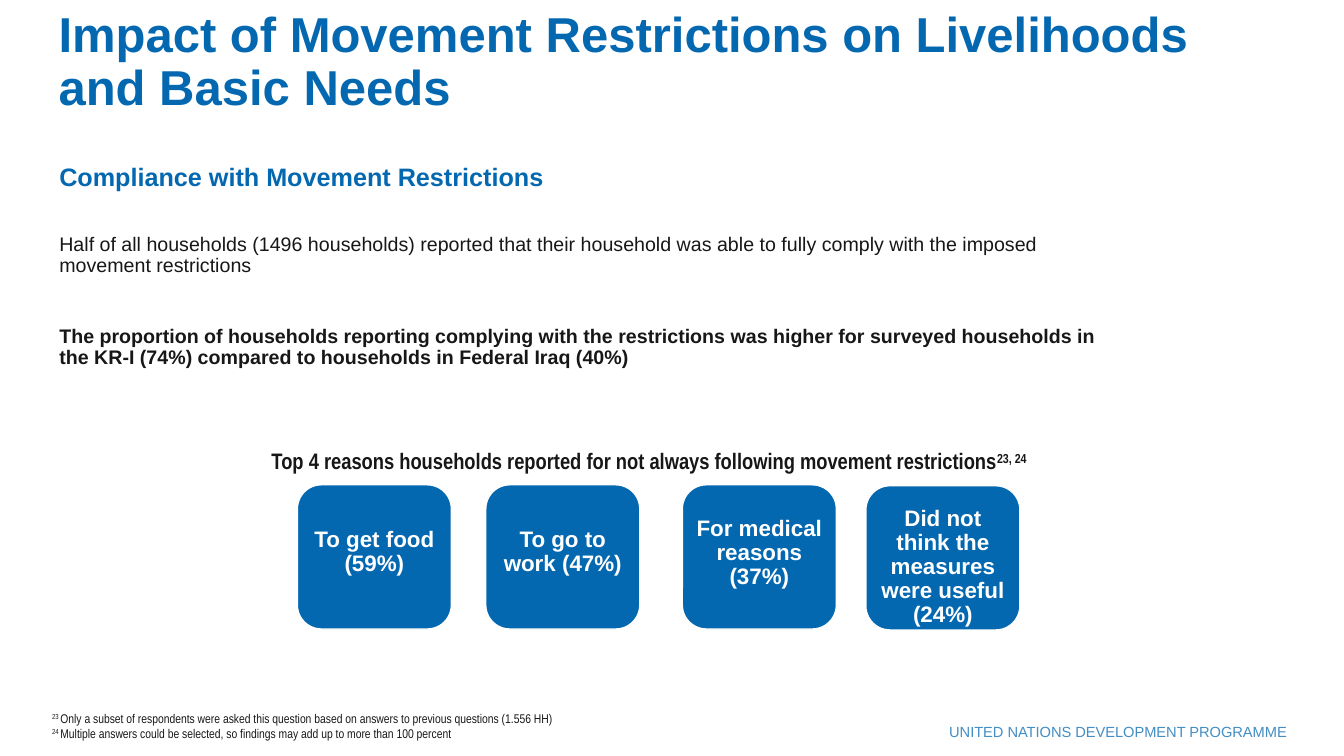
from pptx import Presentation
from pptx.dml.color import RGBColor
from pptx.enum.shapes import MSO_SHAPE as Shape
from pptx.enum.text import MSO_ANCHOR as Anchor, MSO_AUTO_SIZE as AutoSize, PP_ALIGN as Align
from pptx.util import Pt

COLORS = {"blue": "0468B1", "pale_blue": "438EC4", "ink": "181717", "white": "FFFFFF"}
REASONS = [
    ("To get food (59%)", 212.4, 346.3, 26),
    ("To go to work (47%)", 347, 346.3, 26),
    ("For medical reasons (37%)", 487.4, 346.3, 18),
    ("Did not think the measures were useful (24%)", 618.5, 347, 10),
]
NOTES = [
    ("23 ", "Only a subset of respondents were asked this question based on answers "
            "to previous questions (1.556 HH)"),
    ("24 ", "Multiple answers could be selected, so findings may add up to more than 100 percent"),
]


def color(name):
    """Return the named colour."""
    return RGBColor.from_string(COLORS[name])


def write(para, text, size=14, font="Arial", ink="ink", bold=False, raised=False):
    """Add a formatted span of text to a paragraph."""
    span = para.add_run()
    span.text = text
    span.font.size = Pt(size)
    span.font.name = font
    span.font.bold = bold
    span.font.color.rgb = color(ink)
    if raised:
        span.font._element.set("baseline", "30000")


def set_para(para, align=Align.LEFT, spacing=None, before=0):
    """Set alignment and spacing of a paragraph and return it."""
    para.alignment = align
    para.line_spacing = spacing
    para.space_before = Pt(before)
    return para


def add_box(page, left, top, width, height):
    """Add a wrapping text box and return its text frame."""
    box = page.shapes.add_textbox(Pt(left), Pt(top), Pt(width), Pt(height))
    box.text_frame.word_wrap = True
    return box.text_frame


def set_title(page, text):
    """Place and fill the title placeholder."""
    title = page.shapes.title
    title.left, title.top, title.width, title.height = Pt(34.6), Pt(7.2), Pt(828), Pt(79.2)
    frame = title.text_frame
    frame.word_wrap = True
    frame.auto_size = AutoSize.NONE
    frame.vertical_anchor = Anchor.BOTTOM
    write(set_para(frame.paragraphs[0], spacing=0.9), text, size=35, ink="blue", bold=True)


def add_reason(page, text, left, top, inset):
    """Add a rounded tile holding one reason."""
    tile = page.shapes.add_shape(Shape.ROUNDED_RECTANGLE, Pt(left), Pt(top), Pt(110), Pt(103))
    tile.shadow.inherit = False
    tile.fill.solid()
    tile.fill.fore_color.rgb = color("blue")
    tile.line.color.rgb = color("white")
    tile.line.width = Pt(1)
    frame = tile.text_frame
    frame.word_wrap = True
    frame.vertical_anchor = Anchor.TOP
    frame.margin_left = frame.margin_right = Pt(3.6)
    frame.margin_top, frame.margin_bottom = Pt(inset), Pt(0)
    para = set_para(frame.paragraphs[0], Align.CENTER, 0.9)
    write(para, text, size=16, ink="white", bold=True)


def add_notes(page):
    """Add the numbered footnotes."""
    frame = add_box(page, 30.2, 504, 643, 40)
    for index, (number, text) in enumerate(NOTES):
        para = frame.add_paragraph() if index else frame.paragraphs[0]
        write(para, number, size=9, font="Arial Narrow", raised=True)
        write(para, text, size=9, font="Arial Narrow")


def main():
    """Build and save the slide."""
    deck = Presentation()
    deck.slide_width, deck.slide_height = Pt(960), Pt(540)
    page = deck.slides.add_slide(deck.slide_layouts[5])
    set_title(page, "Impact of Movement Restrictions on Livelihoods and Basic Needs")

    footer = add_box(page, 615.6, 512.6, 311, 20).paragraphs[0]
    write(set_para(footer, Align.RIGHT), "UNITED NATIONS DEVELOPMENT PROGRAMME",
          size=10.5, ink="pale_blue")

    heading = add_box(page, 35.3, 113.8, 636.5, 41.8).paragraphs[0]
    write(set_para(heading, spacing=0.9), "Compliance with Movement Restrictions",
          size=18, ink="blue", bold=True)

    body = add_box(page, 35.3, 164.2, 764.6, 130)
    write(set_para(body.paragraphs[0], spacing=0.9),
          "Half of all households (1496 households) reported that their household was able "
          "to fully comply with the imposed movement restrictions")
    write(set_para(body.add_paragraph(), spacing=0.9, before=35),
          "The proportion of households reporting complying with the restrictions was higher "
          "for surveyed households in the KR-I (74%) compared to households in Federal Iraq (40%)",
          bold=True)

    caption = set_para(add_box(page, 185, 316, 557.3, 26.6).paragraphs[0], Align.CENTER)
    caption_format = {"size": 16, "font": "Arial Narrow", "bold": True}
    write(caption, "Top 4 reasons households reported for not always following movement restrictions",
          **caption_format)
    write(caption, "23, 24", raised=True, **caption_format)

    for reason in REASONS:
        add_reason(page, *reason)
    add_notes(page)
    deck.save("out.pptx")


if __name__ == "__main__":
    main()
